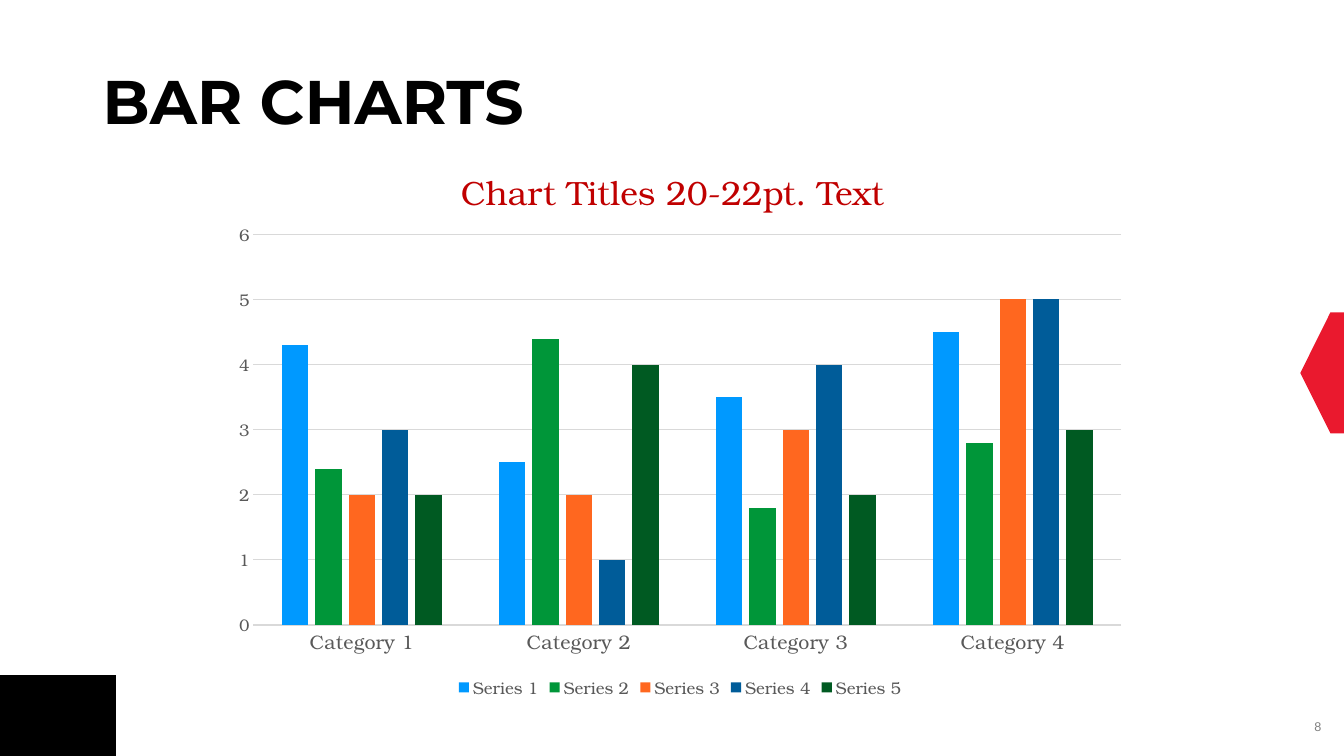
from dataclasses import dataclass

from lxml import etree
from pptx import Presentation
from pptx import util as u
from pptx.chart import data as chart_data
from pptx.dml.color import RGBColor
from pptx.enum import chart as ch
from pptx.enum import shapes, text

BLACK = RGBColor(0x00, 0x00, 0x00)
RED = RGBColor(0xEA, 0x19, 0x2E)
DARK_RED = RGBColor(0xC0, 0x00, 0x00)
GREY = RGBColor(0x80, 0x80, 0x80)
LABEL_GREY = RGBColor(0x59, 0x59, 0x59)
GRID_GREY = RGBColor(0xD9, 0xD9, 0xD9)
SERIF = "TeX Gyre Bonum"

SLIDE_WIDTH, SLIDE_HEIGHT = u.Cm(33.87), u.Cm(19.05)


@dataclass(frozen=True)
class Label:
    wording: str
    box: tuple[float, float, float, float]
    font: str
    size: int
    color: RGBColor
    align: text.PP_ALIGN
    bold: bool = False
    line_spacing: float = 1.0
    inset: bool = True


@dataclass(frozen=True)
class Series:
    name: str
    values: tuple[float, ...]
    color: RGBColor


LABELS = [
    Label("8", (31.9, 17.98, 1.65, 0.64), "Arial", 9, GREY, text.PP_ALIGN.RIGHT),
    Label("Chart Titles 20-22pt. Text", (9.73, 4.19, 14.43, 1.4), SERIF, 24,
          DARK_RED, text.PP_ALIGN.CENTER, line_spacing=0.95, inset=False),
    Label("BAR CHARTS", (2.34, 0.84, 30.4, 3.68), "Montserrat", 44, BLACK,
          text.PP_ALIGN.LEFT, bold=True, line_spacing=0.8),
]
CATEGORIES = [f"Category {number}" for number in range(1, 5)]
SERIES = [
    Series("Series 1", (4.3, 2.5, 3.5, 4.5), RGBColor(0x00, 0x99, 0xFF)),
    Series("Series 2", (2.4, 4.4, 1.8, 2.8), RGBColor(0x00, 0x96, 0x39)),
    Series("Series 3", (2, 2, 3, 5), RGBColor(0xFF, 0x67, 0x1F)),
    Series("Series 4", (3, 1, 4, 5), RGBColor(0x00, 0x5C, 0x99)),
    Series("Series 5", (2, 4, 2, 3), RGBColor(0x00, 0x5A, 0x22)),
]


def fill_plain(shape, color: RGBColor) -> None:
    """Give a shape a solid fill without outline or shadow."""
    shape.fill.solid()
    shape.fill.fore_color.rgb = color
    shape.line.fill.background()
    shape.shadow.inherit = False


def style_font(font, name: str, size: int, color: RGBColor) -> None:
    font.name = name
    font.size = u.Pt(size)
    font.color.rgb = color


def style_line(line, color: RGBColor) -> None:
    line.color.rgb = color
    line.width = u.Pt(0.75)


def add_label(slide, label: Label) -> None:
    frame = slide.shapes.add_textbox(*map(u.Cm, label.box)).text_frame
    frame.word_wrap = True
    frame.vertical_anchor = text.MSO_ANCHOR.MIDDLE
    if not label.inset:
        frame.margin_left = frame.margin_right = 0
        frame.margin_top = frame.margin_bottom = 0
    paragraph = frame.paragraphs[0]
    paragraph.alignment = label.align
    paragraph.line_spacing = label.line_spacing
    run = paragraph.add_run()
    run.text = label.wording
    style_font(run.font, label.font, label.size, label.color)
    run.font.bold = label.bold


def add_decoration(slide) -> None:
    """Draw the red edge marker and the black corner block."""
    tip_x, shoulder_x = u.Cm(32.77), u.Cm(33.53)
    top, middle, bottom = u.Cm(7.87), u.Cm(9.4), u.Cm(10.92)
    outline = slide.shapes.build_freeform(shoulder_x, top)
    outline.add_line_segments([(SLIDE_WIDTH, top), (SLIDE_WIDTH, bottom),
                               (shoulder_x, bottom), (tip_x, middle)])
    fill_plain(outline.convert_to_shape(), RED)
    corner = slide.shapes.add_shape(shapes.MSO_SHAPE.RECTANGLE, 0, u.Cm(17.01),
                                    u.Cm(2.92), u.Cm(2.04))
    fill_plain(corner, BLACK)


def add_bar_chart(slide) -> None:
    bar_data = chart_data.CategoryChartData()
    bar_data.categories = CATEGORIES
    for series in SERIES:
        bar_data.add_series(series.name, series.values)
    chart = slide.shapes.add_chart(
        ch.XL_CHART_TYPE.COLUMN_CLUSTERED, u.Cm(5.56), u.Cm(5.38),
        u.Cm(23.16), u.Cm(12.32), bar_data).chart
    style_font(chart.font, SERIF, 10, BLACK)
    chart.has_title = False

    plot = chart.plots[0]
    plot.gap_width, plot.overlap = 219, -27
    plot.vary_by_categories = False
    for bars, series in zip(plot.series, SERIES):
        bars.format.fill.solid()
        bars.format.fill.fore_color.rgb = series.color
        bars.invert_if_negative = False

    for axis, size in ((chart.category_axis, 14), (chart.value_axis, 12)):
        axis.major_tick_mark = axis.minor_tick_mark = ch.XL_TICK_MARK.NONE
        style_font(axis.tick_labels.font, SERIF, size, LABEL_GREY)
    style_line(chart.category_axis.format.line, GRID_GREY)
    values = chart.value_axis
    values.minimum_scale, values.maximum_scale, values.major_unit = 0, 6, 1
    values.format.line.fill.background()
    values.has_major_gridlines = True
    style_line(values.major_gridlines.format.line, GRID_GREY)

    chart.has_legend = True
    chart.legend.position = ch.XL_LEGEND_POSITION.BOTTOM
    chart.legend.include_in_layout = False
    style_font(chart.legend.font, SERIF, 12, LABEL_GREY)


def main() -> None:
    deck = Presentation()
    deck.slide_width, deck.slide_height = SLIDE_WIDTH, SLIDE_HEIGHT
    slide = deck.slides.add_slide(deck.slide_layouts[6])
    add_decoration(slide)
    for label in LABELS:
        add_label(slide, label)
    add_bar_chart(slide)
    deck.save("out.pptx")


if __name__ == "__main__":
    main()
